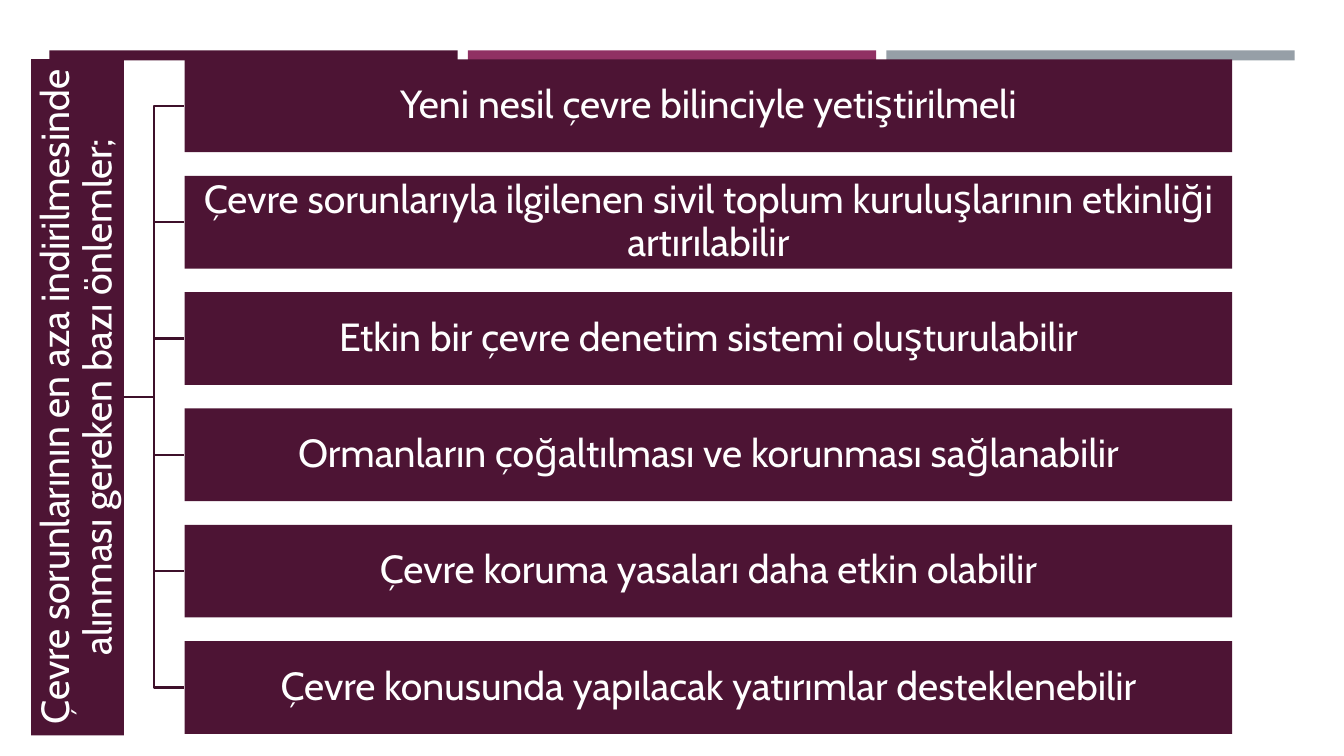
from pptx import Presentation
from pptx.dml.color import RGBColor
from pptx.enum.shapes import MSO_SHAPE
from pptx.enum.text import MSO_ANCHOR, MSO_AUTO_SIZE, PP_ALIGN
from pptx.util import Inches, Pt

COLORS = {
    "plum": "4D1434",
    "magenta": "903163",
    "gray": "969FA7",
    "branch": "3E102A",
    "text": "FFFFFF",
}
HEADING = "Çevre sorunlarının en aza indirilmesinde alınması gereken bazı önlemler;"
MEASURES = [
    "Yeni nesil çevre bilinciyle yetiştirilmeli",
    "Çevre sorunlarıyla ilgilenen sivil toplum kuruluşlarının etkinliği artırılabilir",
    "Etkin bir çevre denetim sistemi oluşturulabilir",
    "Ormanların çoğaltılması ve korunması sağlanabilir",
    "Çevre koruma yasaları daha etkin olabilir",
    "Çevre konusunda yapılacak yatırımlar desteklenebilir",
]
BAND_LEFT, BAND_TOP, BAND_WIDTH, BAND_PITCH = 0.49, 0.5, 4.05, 4.15
BAR_HEIGHT = 0.92
ROW_TOP, ROW_PITCH = 0.59, 1.154
MEASURE_LEFT, MEASURE_WIDTH = 1.83, 10.39
HEADING_LENGTH = 6.71
ROOT_X, ROOT_Y = 1.23, 3.94
TRUNK_X = (ROOT_X + MEASURE_LEFT) / 2


def paint(shape, color):
    """Give a shape a plain fill with no outline."""
    shape.fill.solid()
    shape.fill.fore_color.rgb = RGBColor.from_string(COLORS[color])
    shape.line.fill.background()


def write_label(shape, wording):
    """Set centred white text with narrow insets."""
    frame = shape.text_frame
    frame.text = wording
    frame.word_wrap = True
    frame.auto_size = MSO_AUTO_SIZE.NONE
    frame.vertical_anchor = MSO_ANCHOR.MIDDLE
    frame.margin_left = frame.margin_right = Inches(0.02)
    frame.margin_top = frame.margin_bottom = Inches(0.02)
    paragraph = frame.paragraphs[0]
    paragraph.alignment = PP_ALIGN.CENTER
    paragraph.line_spacing = 0.9
    paragraph.space_before = Pt(0)
    paragraph.font.name = "Cabin"
    paragraph.font.size = Pt(28)
    paragraph.font.color.rgb = RGBColor.from_string(COLORS["text"])


def add_bar(slide, left, top, width, height, color):
    """Add a flat rectangle and return it."""
    bar = slide.shapes.add_shape(
        MSO_SHAPE.RECTANGLE, Inches(left), Inches(top), Inches(width), Inches(height)
    )
    bar.shadow.inherit = False
    paint(bar, color)
    return bar


def add_branch(slide, row_y):
    """Draw the elbow line from the heading to one measure."""
    builder = slide.shapes.build_freeform(Inches(ROOT_X), Inches(ROOT_Y))
    bends = [(TRUNK_X, ROOT_Y), (TRUNK_X, row_y), (MEASURE_LEFT, row_y)]
    builder.add_line_segments([(Inches(x), Inches(y)) for x, y in bends], close=False)
    branch = builder.convert_to_shape()
    branch.shadow.inherit = False
    branch.fill.background()
    branch.line.color.rgb = RGBColor.from_string(COLORS["branch"])
    branch.line.width = Pt(1.75)


def place_heading(slide):
    """Turn the title into the upright bar on the left."""
    heading = slide.shapes.title
    heading.left = Inches(ROOT_X - (BAR_HEIGHT + HEADING_LENGTH) / 2)
    heading.top = Inches(ROOT_Y - BAR_HEIGHT / 2)
    heading.width, heading.height = Inches(HEADING_LENGTH), Inches(BAR_HEIGHT)
    heading.left = Inches(ROOT_X - BAR_HEIGHT / 2 - HEADING_LENGTH / 2)
    heading.rotation = 270
    paint(heading, "plum")
    write_label(heading, HEADING)


def main():
    """Build the slide and save it."""
    deck = Presentation()
    deck.slide_width, deck.slide_height = Inches(13.33), Inches(7.5)
    slide = deck.slides.add_slide(deck.slide_layouts[5])
    for column, color in enumerate(["plum", "magenta", "gray"]):
        add_bar(slide, BAND_LEFT + column * BAND_PITCH, BAND_TOP, BAND_WIDTH, 0.1, color)
    place_heading(slide)
    for row, measure in enumerate(MEASURES):
        top = ROW_TOP + row * ROW_PITCH
        add_branch(slide, top + BAR_HEIGHT / 2)
        bar = add_bar(slide, MEASURE_LEFT, top, MEASURE_WIDTH, BAR_HEIGHT, "plum")
        write_label(bar, measure)
    deck.save("out.pptx")


if __name__ == "__main__":
    main()
